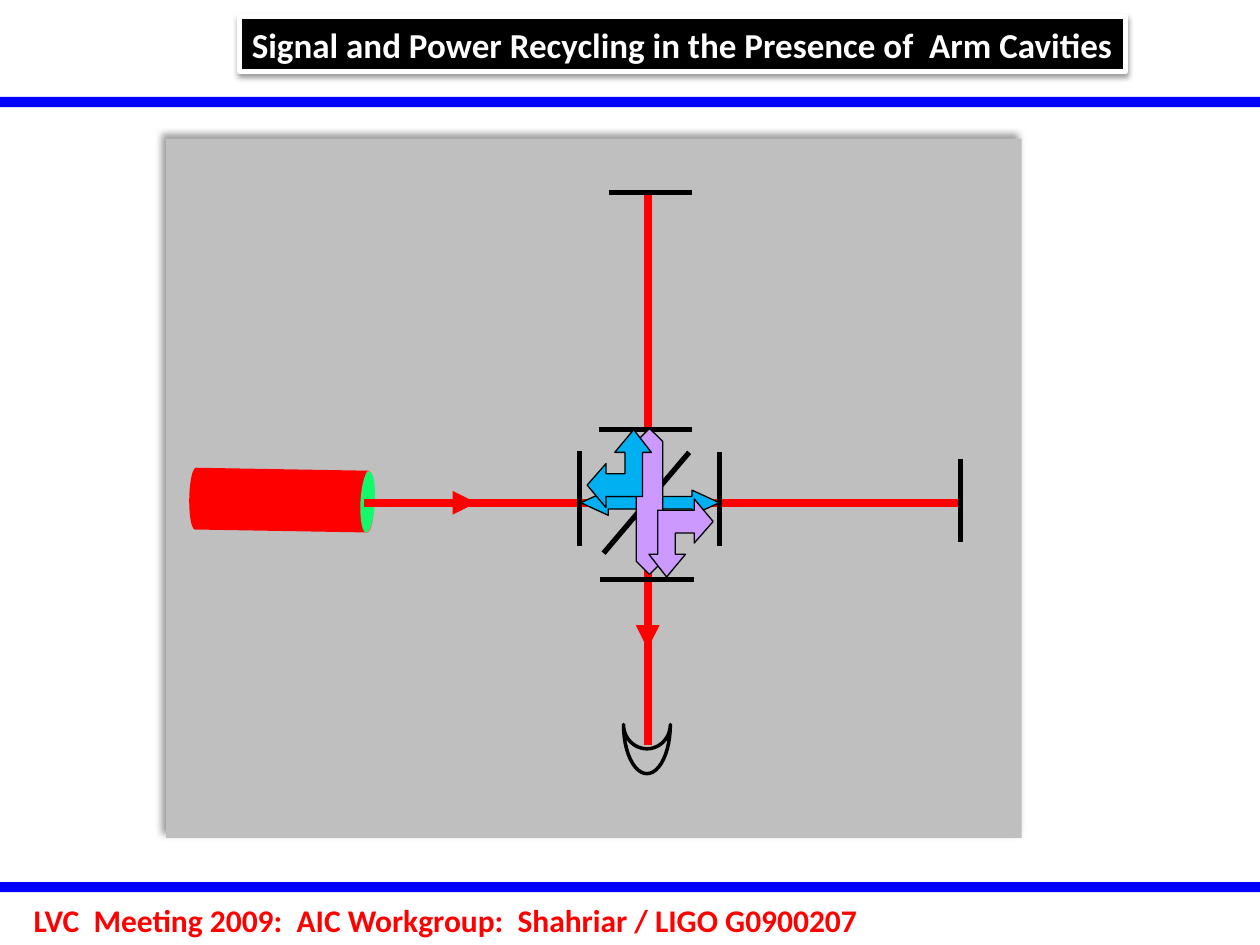
import math
from lxml import etree
from pptx import Presentation
from pptx.dml.color import RGBColor
from pptx.enum.shapes import MSO_SHAPE, MSO_CONNECTOR
from pptx.enum.text import MSO_ANCHOR, MSO_AUTO_SIZE, PP_ALIGN
from pptx.oxml import parse_xml
from pptx.oxml.ns import qn
from pptx.util import Pt

RECT, OVAL, CAN = MSO_SHAPE.RECTANGLE, MSO_SHAPE.OVAL, MSO_SHAPE.CAN
UP_DOWN, LEFT_RIGHT = MSO_SHAPE.UP_DOWN_ARROW, MSO_SHAPE.LEFT_RIGHT_ARROW
STRAIGHT = MSO_CONNECTOR.STRAIGHT
CENTER, LEFT = PP_ALIGN.CENTER, PP_ALIGN.LEFT
MIDDLE, FIT = MSO_ANCHOR.MIDDLE, MSO_AUTO_SIZE.SHAPE_TO_FIT_TEXT
DRAWING_NS = "http://schemas.openxmlformats.org/drawingml/2006/main"

COLORS = {
    "bar": "0000FF", "panel": "BFBFBF", "beam": "FF0000", "aperture": "14F86B",
    "black": "000000", "white": "FFFFFF", "blue": "00B0F0", "purple": "CC99FF",
}
TITLE = "Signal and Power Recycling in the Presence of  Arm Cavities"
FOOTER = "LVC  Meeting 2009:  AIC Workgroup:  Shahriar / LIGO G0900207"
TITLE_BOX = (136.8, 9.4, 506.2, 31.7)
FOOTER_BOX = (12.2, 511.2, 490.3, 28.8)
BAR_TOPS = (55.4, 504)
PANEL_BOX = (95, 79.2, 488.9, 399.6)

LASER_CENTER = (161, 285.8)
LASER_LENGTH, LASER_WIDTH, LASER_TILT = 105.8, 35.3, 1
APERTURE_BOX = (206, 269.3, 8.2, 35)

BEAM_X, BEAM_Y = 370.1, 287.3
BEAMS = [(208, BEAM_Y, 549.4, BEAM_Y), (BEAM_X, 425.5, BEAM_X, 109.4)]
BEAM_ARROWS = [
    (239.8, BEAM_Y, 272.2, BEAM_Y),
    (BEAM_X, 338.4, BEAM_X, 370.8),
]
MIRRORS = [
    (342.7, 331.2, 396.7, 331.2),
    (331.2, 257.8, 331.2, 311.8),
    (549, 262.1, 549, 309.6),
    (393.8, 258.5, 344.9, 316.1),
    (411.1, 258.5, 411.1, 311.8),
    (342, 245.5, 395.3, 245.5),
    (347.8, 110.2, 395.3, 110.2),
]
CAVITY_ARROWS = [
    (LEFT_RIGHT, (331.9, 280.1, 79.2, 14.4), "blue"),
    (UP_DOWN, (363.6, 244.8, 15.1, 83.5), "purple"),
]
CORNER_ARROW = [
    (26.6, 0), (15.8, 13), (21.6, 13), (21.6, 25.2), (10.8, 25.2), (10.8, 19.4),
    (0, 31.7), (10.8, 44.6), (10.8, 38.2), (31.7, 38.2), (31.7, 13), (36.7, 13),
]
CORNER_ARROWS = [(370.8, 285.1, 180, "purple"), (335.5, 245.5, 0, "blue")]
DETECTOR = {"x": 369.7, "y": 414, "half_width": 13.4, "outer": 28.1, "inner": 13.9}


def rgb(name):
    return RGBColor.from_string(COLORS[name])


def paint(shape, fill=None, line=None, width=0.75):
    shape.shadow.inherit = False
    if fill:
        shape.fill.solid()
        shape.fill.fore_color.rgb = rgb(fill)
    else:
        shape.fill.background()
    if line:
        shape.line.color.rgb = rgb(line)
        shape.line.width = Pt(width)
    else:
        shape.line.fill.background()
    return shape


def add_preset(kind, box, *style):
    return paint(slide.shapes.add_shape(kind, *map(Pt, box)), *style)


def add_outline(points, *style):
    corners = [(Pt(x), Pt(y)) for x, y in points]
    builder = slide.shapes.build_freeform(*corners[0], scale=1.0)
    builder.add_line_segments(corners[1:], close=True)
    return paint(builder.convert_to_shape(), *style)


def add_line(ends, color, width, arrow=False):
    line = slide.shapes.add_connector(STRAIGHT, *map(Pt, ends))
    line.line.color.rgb = rgb(color)
    line.line.width = Pt(width)
    if arrow:
        etree.SubElement(line.line._get_or_add_ln(), qn("a:tailEnd"), type="triangle")
    etree.SubElement(line._element.spPr, qn("a:effectLst"))


def add_shadow(shape, blur, distance, angle, opacity):
    effects = shape._element.spPr.find(qn("a:effectLst"))
    effects.append(parse_xml(
        f'<a:outerShdw xmlns:a="{DRAWING_NS}" blurRad="{Pt(blur)}" dist="{Pt(distance)}" '
        f'dir="{angle * 60000}" algn="ctr" rotWithShape="0"><a:srgbClr val="{COLORS["black"]}">'
        f'<a:alpha val="{opacity * 1000}"/></a:srgbClr></a:outerShdw>'))


def write(shape, text, size, color, align):
    frame = shape.text_frame
    frame.text = text
    frame.word_wrap = False
    frame.auto_size = FIT
    frame.vertical_anchor = MIDDLE
    paragraph = frame.paragraphs[0]
    paragraph.alignment = align
    font = paragraph.runs[0].font
    font.name, font.size, font.bold = "Calibri", Pt(size), True
    font.color.rgb = rgb(color)


def arc(depth, start, end, steps=24):
    for step in range(steps + 1):
        angle = math.radians(start + (end - start) * step / steps)
        yield (DETECTOR["x"] + DETECTOR["half_width"] * math.cos(angle),
               DETECTOR["y"] + depth * math.sin(angle))


prs = Presentation()
prs.slide_width, prs.slide_height = Pt(720), Pt(540)
slide = prs.slides.add_slide(prs.slide_layouts[6])

for top in BAR_TOPS:
    add_preset(RECT, (0, top, 720, 5.8), "bar")
footer = slide.shapes.add_textbox(*map(Pt, FOOTER_BOX))
write(footer, FOOTER, 18, "beam", LEFT)

panel = add_preset(RECT, PANEL_BOX, "panel")
add_shadow(panel, 4, 3, 225, 40)

laser_x, laser_y = LASER_CENTER
laser = add_preset(CAN, (laser_x - LASER_WIDTH / 2, laser_y - LASER_LENGTH / 2,
                         LASER_WIDTH, LASER_LENGTH), "beam")
laser.adjustments[0] = 0.2
laser.rotation = 90 + LASER_TILT
aperture = add_preset(OVAL, APERTURE_BOX, "aperture")
aperture.rotation = 3

for beam in BEAMS:
    add_line(beam, "beam", 4.5)
for mirror in MIRRORS:
    add_line(mirror, "black", 3)
add_outline([*arc(DETECTOR["outer"], 180, 0), *arc(DETECTOR["inner"], 0, 180)],
            None, "black", 2)
for beam_arrow in BEAM_ARROWS:
    add_line(beam_arrow, "beam", 4.5, arrow=True)

for kind, box, color in CAVITY_ARROWS:
    cavity_arrow = add_preset(kind, box, color, "black")
    cavity_arrow.adjustments[0] = 0.5
    cavity_arrow.adjustments[1] = 1.09
for left, top, turn, color in CORNER_ARROWS:
    points = [(left + x, top + y) for x, y in CORNER_ARROW]
    add_outline(points, color, "black").rotation = turn

title = add_preset(RECT, TITLE_BOX, "black", "white", 3)
add_shadow(title, 3.1, 1.6, 90, 38)
write(title, TITLE, 20, "white", CENTER)

prs.save("out.pptx")
